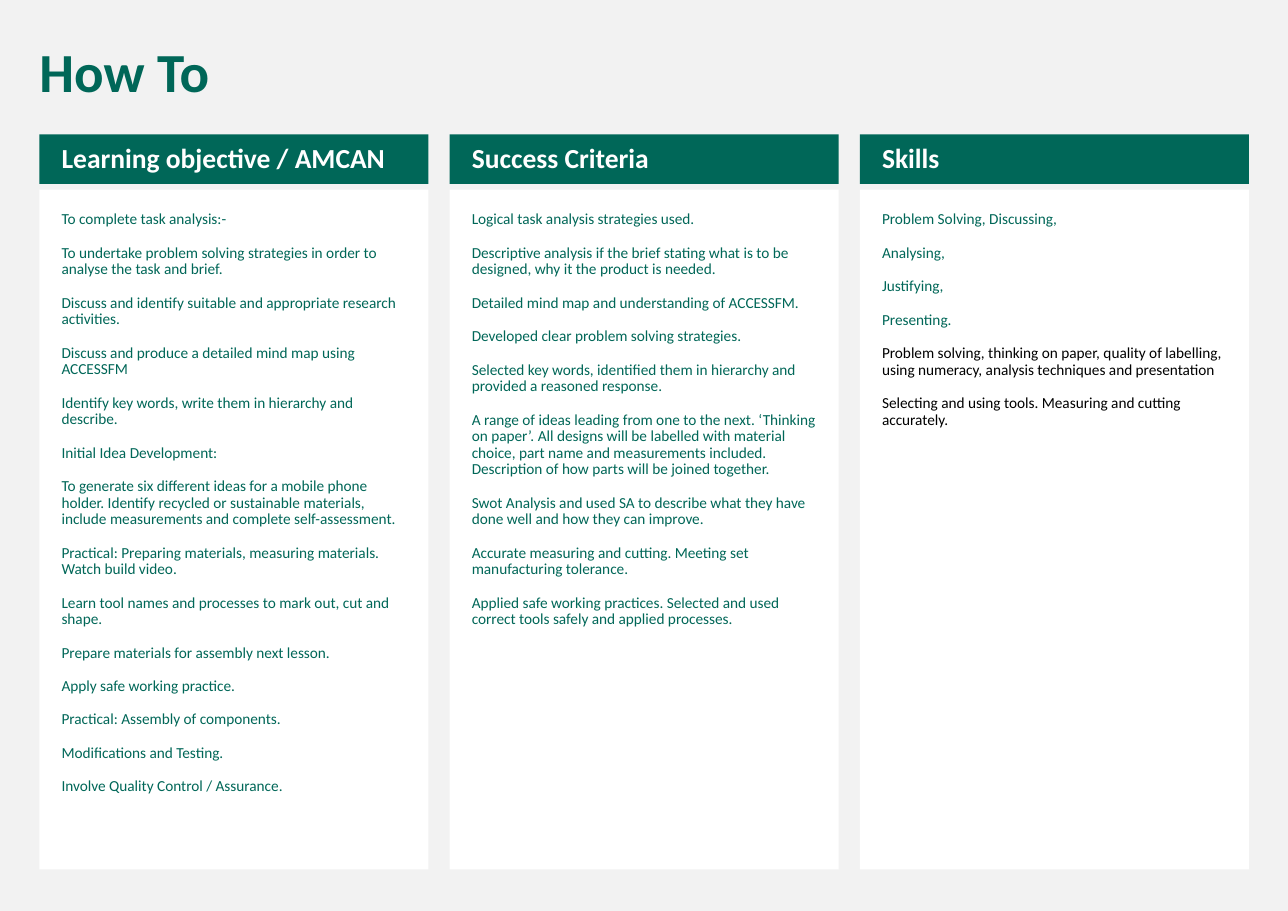
from dataclasses import dataclass

from pptx import Presentation
from pptx.dml.color import RGBColor
from pptx.enum.shapes import MSO_SHAPE
from pptx.enum.text import MSO_ANCHOR, PP_ALIGN
from pptx.util import Cm, Pt


@dataclass(frozen=True)
class Theme:
    font: str = "Calibri"
    page: RGBColor = RGBColor(0xF2, 0xF2, 0xF2)
    green: RGBColor = RGBColor(0x00, 0x67, 0x58)
    white: RGBColor = RGBColor(0xFF, 0xFF, 0xFF)
    black: RGBColor = RGBColor(0x00, 0x00, 0x00)
    title_size: int = 36
    heading_size: int = 18
    body_size: int = 10
    space_before: int = 11
    line_spacing: float = 0.9


# Page grid, in centimetres
LEFT, COLUMN_WIDTH, COLUMN_PITCH = 0.91, 8.97, 9.46
HEADING_TOP, HEADING_HEIGHT = 3.1, 1.14
PANEL_TOP, PANEL_HEIGHT = 4.37, 15.67
PANEL_INSETS = (0.51, 0.51, 0.51, 0.51)
HEADING_INSETS = (0.51, 0.13, 0.25, 0.13)
TITLE_INSETS = (0.25, 0.13, 0.25, 0.13)

# Heading, green paragraphs, black paragraphs
COLUMNS = [
    ("Learning objective / AMCAN", [
        "To complete task analysis:-",
        "To undertake problem solving strategies in order to analyse the task and brief.",
        "Discuss and identify suitable and appropriate research activities.",
        "Discuss and produce a detailed mind map using ACCESSFM",
        "Identify key words, write them in hierarchy and describe.",
        "Initial Idea Development:",
        "To generate six different ideas for a mobile phone holder. Identify recycled or "
        "sustainable materials, include measurements and complete self-assessment.",
        "Practical: Preparing materials, measuring materials. Watch build video.",
        "Learn tool names and processes to mark out, cut and shape.",
        "Prepare materials for assembly next lesson.",
        "Apply safe working practice.",
        "Practical: Assembly of components.",
        "Modifications and Testing.",
        "Involve Quality Control / Assurance.",
    ], []),
    ("Success Criteria", [
        "Logical task analysis strategies used.",
        "Descriptive analysis if the brief stating what is to be designed, "
        "why it the product is needed.",
        "Detailed mind map and understanding of ACCESSFM.",
        "Developed clear problem solving strategies.",
        "Selected key words, identified them in hierarchy and provided a reasoned response.",
        "A range of ideas leading from one to the next. ‘Thinking on paper’. All designs will "
        "be labelled with material choice, part name and measurements included. "
        "Description of how parts will be joined together.",
        "Swot Analysis and used SA to describe what they have done well and how they can improve.",
        "Accurate measuring and cutting. Meeting set manufacturing tolerance.",
        "Applied safe working practices. Selected and used correct tools safely "
        "and applied processes.",
    ], []),
    ("Skills", [
        "Problem Solving, Discussing,",
        "Analysing,",
        "Justifying,",
        "Presenting.",
    ], [
        "Problem solving, thinking on paper, quality of labelling, using numeracy, "
        "analysis techniques and presentation",
        "Selecting and using tools. Measuring and cutting accurately.",
    ]),
]


class PageBuilder:
    def __init__(self, page, theme):
        self.page, self.theme = page, theme

    def background(self, color):
        fill = self.page.background.fill
        fill.solid()
        fill.fore_color.rgb = color

    def panel(self, left, top, width, height, color):
        box = self.page.shapes.add_shape(
            MSO_SHAPE.RECTANGLE, Cm(left), Cm(top), Cm(width), Cm(height))
        box.shadow.inherit = False
        box.fill.solid()
        box.fill.fore_color.rgb = color
        box.line.fill.background()
        return box

    def label(self, left, top, width, height):
        return self.page.shapes.add_textbox(Cm(left), Cm(top), Cm(width), Cm(height))

    def fill_text(self, box, lines, size, insets, anchor=MSO_ANCHOR.TOP, bold=False):
        """Fill a box with (text, colour) paragraphs."""
        frame = box.text_frame
        frame_format = {"word_wrap": True, "vertical_anchor": anchor}
        for side, inset in zip(("left", "top", "right", "bottom"), insets):
            frame_format[f"margin_{side}"] = Cm(inset)
        self.apply(frame, frame_format)
        for index, (text, color) in enumerate(lines):
            para = frame.add_paragraph() if index else frame.paragraphs[0]
            self.apply(para, {"alignment": PP_ALIGN.LEFT,
                              "line_spacing": self.theme.line_spacing,
                              "space_before": Pt(self.theme.space_before)})
            span = para.add_run()
            span.text = text
            self.apply(span.font, {"name": self.theme.font, "size": Pt(size), "bold": bold})
            span.font.color.rgb = color

    def apply(self, target, values):
        for name, value in values.items():
            setattr(target, name, value)


def main():
    theme = Theme()
    deck = Presentation()
    deck.slide_width, deck.slide_height = Cm(29.7), Cm(21)
    builder = PageBuilder(deck.slides.add_slide(deck.slide_layouts[6]), theme)
    builder.background(theme.page)

    # Title
    title = builder.label(0.66, 0.91, 28.14, 1.65)
    builder.fill_text(title, [("How To", theme.green)], theme.title_size, TITLE_INSETS, bold=True)

    # Three columns, each a heading bar above a text panel
    for index, (heading, green_lines, black_lines) in enumerate(COLUMNS):
        left = LEFT + index * COLUMN_PITCH
        panel = builder.panel(left, PANEL_TOP, COLUMN_WIDTH, PANEL_HEIGHT, theme.white)
        lines = [(text, theme.green) for text in green_lines]
        lines += [(text, theme.black) for text in black_lines]
        builder.fill_text(panel, lines, theme.body_size, PANEL_INSETS)

        bar = builder.panel(left, HEADING_TOP, COLUMN_WIDTH, HEADING_HEIGHT, theme.green)
        builder.fill_text(bar, [(heading, theme.white)], theme.heading_size, HEADING_INSETS,
                          anchor=MSO_ANCHOR.MIDDLE, bold=True)

    deck.save("out.pptx")


if __name__ == "__main__":
    main()
